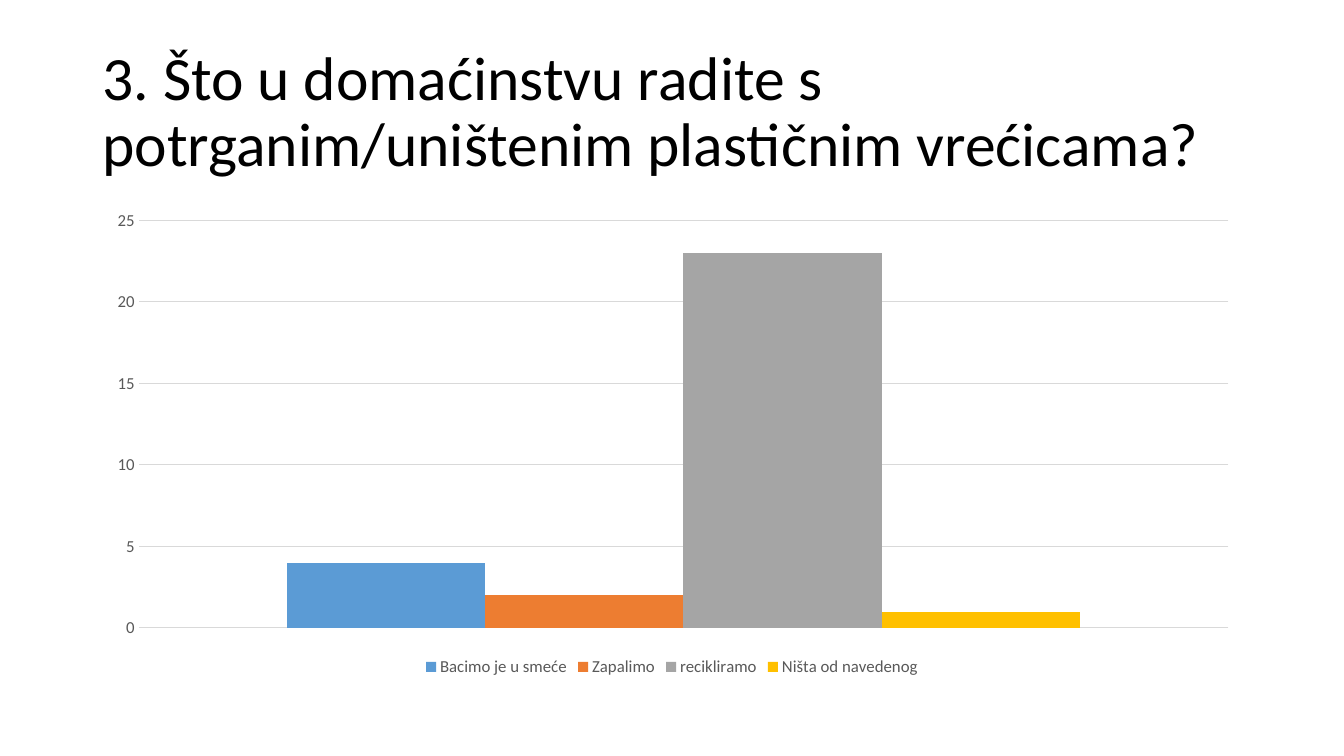
from lxml import etree
from pptx import Presentation
from pptx.chart.data import CategoryChartData
from pptx.dml.color import RGBColor
from pptx.enum.chart import XL_CHART_TYPE as ChartType
from pptx.enum.chart import XL_LEGEND_POSITION as LegendPosition
from pptx.enum.chart import XL_TICK_MARK as TickMark
from pptx.enum.text import MSO_ANCHOR as Anchor
from pptx.enum.text import PP_ALIGN as Align
from pptx.oxml.ns import qn
from pptx.util import Pt

FONT = "Calibri"
TITLE = "3. Što u domaćinstvu radite s potrganim/uništenim plastičnim vrećicama?"
ANSWERS = [
    ("Bacimo je u smeće", 4, "5B9BD5"),
    ("Zapalimo", 2, "ED7D31"),
    ("recikliramo", 23, "A5A5A5"),
    ("Ništa od navedenog", 1, "FFC000"),
]
TITLE_BOX = (66, 28.75, 828, 104.4)
CHART_BOX = (66, 143.75, 828, 342.6)
PLOT_LAYOUT = {"x": 0.04, "y": 0.04, "w": 0.94, "h": 0.85}


def color(value):
    return RGBColor.from_string(value)


def style_font(font, size, value):
    font.name = FONT
    font.size = Pt(size)
    font.color.rgb = color(value)


def place_title(slide, box):
    title = slide.shapes.title
    title.left, title.top, title.width, title.height = map(Pt, box)
    frame = title.text_frame
    frame.text = TITLE
    frame.word_wrap = True
    frame.vertical_anchor = Anchor.MIDDLE
    para = frame.paragraphs[0]
    para.alignment = Align.LEFT
    para.line_spacing = 0.9
    style_font(para.font, 44, "000000")


def set_plot_layout(chart):
    """Fix the inner plot area as fractions of the chart's size."""
    plot_area = chart.plots[0]._element.getparent()
    layout = plot_area.find(qn("c:layout"))
    if layout is None:
        layout = etree.Element(qn("c:layout"))
        plot_area.insert(0, layout)
    manual = etree.SubElement(layout, qn("c:manualLayout"))
    settings = {"layoutTarget": "inner", "xMode": "edge", "yMode": "edge", **PLOT_LAYOUT}
    for name, value in settings.items():
        etree.SubElement(manual, qn(f"c:{name}")).set("val", str(value))


def add_answer_chart(slide, box):
    data = CategoryChartData()
    data.categories = ["1"]
    for name, count, _ in ANSWERS:
        data.add_series(name, [count])
    chart = slide.shapes.add_chart(
        ChartType.COLUMN_CLUSTERED, *map(Pt, box), data).chart
    chart.has_title = False
    style_font(chart.font, 12, "595959")

    plot = chart.plots[0]
    plot.gap_width = 150
    plot.overlap = 0
    plot.vary_by_categories = False
    for series, (_, _, fill) in zip(plot.series, ANSWERS):
        series.format.fill.solid()
        series.format.fill.fore_color.rgb = color(fill)

    chart.category_axis.visible = False
    axis = chart.value_axis
    axis.minimum_scale, axis.maximum_scale, axis.major_unit = 0, 25, 5
    axis.major_tick_mark = axis.minor_tick_mark = TickMark.NONE
    axis.format.line.fill.background()
    axis.has_major_gridlines = True
    grid = axis.major_gridlines.format.line
    grid.width = Pt(0.75)
    grid.color.rgb = color("D9D9D9")
    style_font(axis.tick_labels.font, 12, "595959")

    chart.has_legend = True
    chart.legend.position = LegendPosition.BOTTOM
    chart.legend.include_in_layout = False
    style_font(chart.legend.font, 12, "595959")
    set_plot_layout(chart)


def main():
    deck = Presentation()
    deck.slide_width, deck.slide_height = Pt(960), Pt(540)
    slide = deck.slides.add_slide(deck.slide_layouts[5])
    place_title(slide, TITLE_BOX)
    add_answer_chart(slide, CHART_BOX)
    deck.save("out.pptx")


if __name__ == "__main__":
    main()
